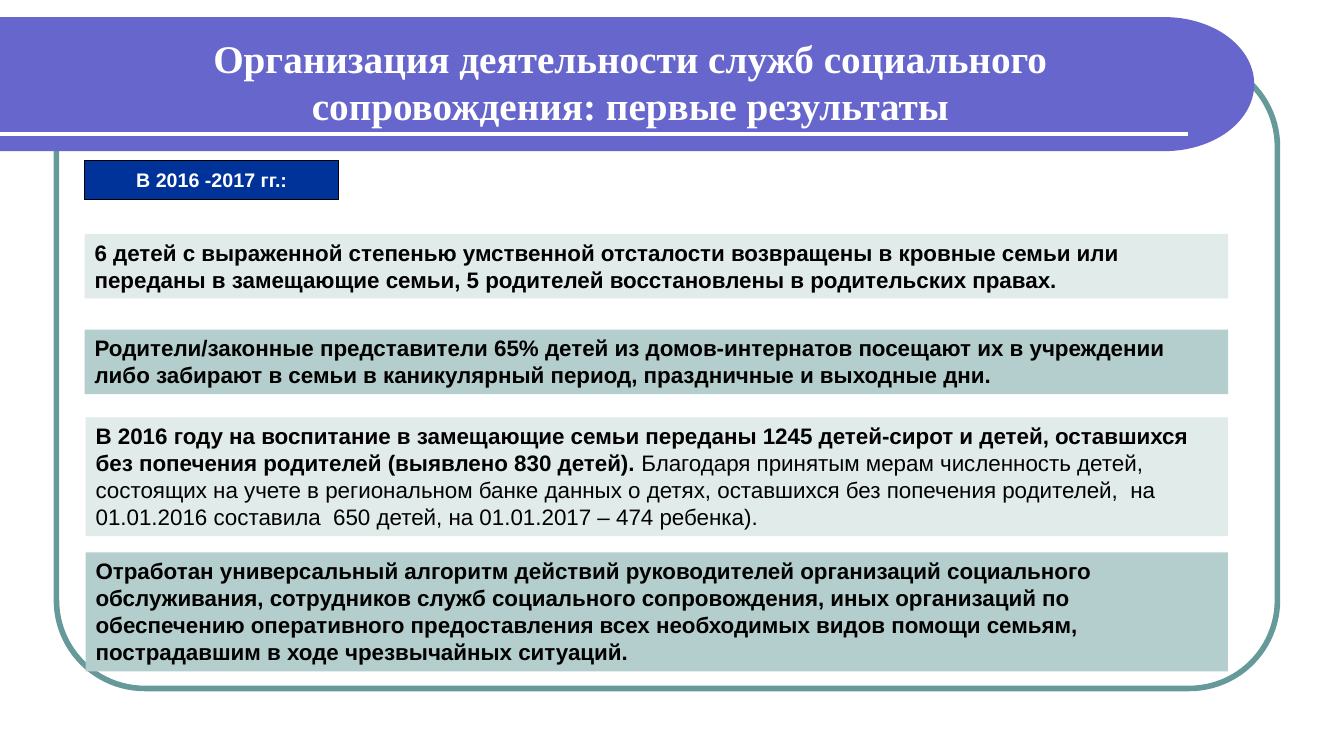
"""Build a slide on the first results of social support services."""
import math
from dataclasses import dataclass

import pptx
import pptx.dml.color
import pptx.enum.shapes
import pptx.enum.text
import pptx.oxml.xmlchemy
import pptx.shapes.autoshape
import pptx.slide
import pptx.text.text
import pptx.util
from pptx.dml.color import RGBColor
from pptx.util import Inches

WHITE = RGBColor(0xFF, 0xFF, 0xFF)
BLACK = RGBColor(0x00, 0x00, 0x00)
TEAL = RGBColor(0x66, 0x99, 0x99)
VIOLET = RGBColor(0x66, 0x66, 0xCC)
NAVY = RGBColor(0x00, 0x33, 0x99)
PALE_TEAL = RGBColor(0xE1, 0xEB, 0xEA)
SOFT_TEAL = RGBColor(0xB3, 0xCE, 0xCD)

TITLE = "Организация деятельности служб социального сопровождения: первые результаты"


@dataclass(frozen=True)
class Result:
    """A result panel with a bold lead and an optional plain remainder."""

    left: float
    top: float
    width: float
    height: float
    fill: RGBColor
    lead: str
    remainder: str = ""


RESULTS = (
    Result(0.84, 2.32, 11.34, 0.64, PALE_TEAL,
           "6 детей с выраженной степенью умственной отсталости возвращены в кровные семьи "
           "или переданы в замещающие семьи, 5 родителей восстановлены в родительских правах."),
    Result(0.84, 3.27, 11.34, 0.64, SOFT_TEAL,
           "Родители/законные представители 65% детей из домов-интернатов посещают их в "
           "учреждении либо забирают в семьи в каникулярный период, праздничные и выходные дни."),
    Result(0.85, 4.14, 11.33, 1.18, PALE_TEAL,
           "В 2016 году на воспитание в замещающие семьи переданы 1245 детей-сирот и детей, "
           "оставшихся без попечения родителей (выявлено 830 детей). ",
           "Благодаря принятым мерам численность детей, состоящих на учете в региональном "
           "банке данных о детях, оставшихся без попечения родителей,  на 01.01.2016 "
           "составила  650 детей, на 01.01.2017 – 474 ребенка)."),
    Result(0.85, 5.48, 11.33, 1.18, SOFT_TEAL,
           "Отработан универсальный алгоритм действий руководителей организаций социального "
           "обслуживания, сотрудников служб социального сопровождения, иных организаций по "
           "обеспечению оперативного предоставления всех необходимых видов помощи семьям, "
           "пострадавшим в ходе чрезвычайных ситуаций."),
)


def format_paragraph(paragraph: pptx.text.text._Paragraph, font_name: str, size: int,
                     color: RGBColor, alignment: pptx.enum.text.PP_ALIGN) -> None:
    """Set the font and alignment of a paragraph."""
    paragraph.alignment = alignment
    paragraph.font.name = font_name
    paragraph.font.size = pptx.util.Pt(size)
    paragraph.font.color.rgb = color
    paragraph.font.bold = True


def add_box(slide: pptx.slide.Slide, left: float, top: float, width: float, height: float,
            fill: RGBColor) -> pptx.shapes.autoshape.Shape:
    """Add a flat rectangle without an outline."""
    shape = slide.shapes.add_shape(pptx.enum.shapes.MSO_SHAPE.RECTANGLE, Inches(left),
                                   Inches(top), Inches(width), Inches(height))
    shape.shadow.inherit = False
    shape.fill.solid()
    shape.fill.fore_color.rgb = fill
    shape.line.fill.background()
    return shape


def add_frame(slide: pptx.slide.Slide) -> None:
    """Add the rounded outline around the content."""
    frame = slide.shapes.add_shape(pptx.enum.shapes.MSO_SHAPE.ROUNDED_RECTANGLE, Inches(0.56),
                                   Inches(0.58), Inches(12.11), Inches(6.25))
    frame.adjustments[0] = 0.14
    frame.shadow.inherit = False
    frame.fill.background()
    frame.line.color.rgb = TEAL
    frame.line.width = pptx.util.Pt(4)


def add_banner(slide: pptx.slide.Slide) -> None:
    """Add the title band with its elliptical end and white rule."""
    top, bottom, straight, right = 0.17, 1.5, 11.55, 12.44
    middle, radius = (top + bottom) / 2, (bottom - top) / 2
    angles = [math.radians(degree) for degree in range(-90, 91, 3)]
    points = [(Inches(straight + (right - straight) * math.cos(angle)),
               Inches(middle + radius * math.sin(angle))) for angle in angles]
    builder = slide.shapes.build_freeform(0, Inches(top))
    builder.add_line_segments(points + [(0, Inches(bottom))], close=True)
    banner = builder.convert_to_shape()
    banner.shadow.inherit = False
    banner.fill.solid()
    banner.fill.fore_color.rgb = VIOLET
    banner.line.fill.background()

    rule = slide.shapes.add_connector(pptx.enum.shapes.MSO_CONNECTOR.STRAIGHT, 0,
                                      Inches(1.33), Inches(11.78), Inches(1.33))
    rule.line.color.rgb = WHITE
    rule.line.width = pptx.util.Pt(3)
    rule.element.spPr.append(pptx.oxml.xmlchemy.OxmlElement("a:effectLst"))


def place_title(slide: pptx.slide.Slide) -> None:
    """Fill the title placeholder and bring it in front of the banner."""
    title = slide.shapes.title
    title.left, title.top = Inches(1.86), Inches(0.36)
    title.width, title.height = Inches(8.78), Inches(0.89)
    title.text_frame.text = TITLE
    title.text_frame.auto_size = pptx.enum.text.MSO_AUTO_SIZE.NONE
    title.text_frame.vertical_anchor = pptx.enum.text.MSO_ANCHOR.MIDDLE
    format_paragraph(title.text_frame.paragraphs[0], "Times New Roman", 28, WHITE,
                     pptx.enum.text.PP_ALIGN.CENTER)
    title.element.getparent().append(title.element)


def add_period(slide: pptx.slide.Slide) -> None:
    """Add the label naming the reporting period."""
    period = add_box(slide, 0.84, 1.59, 2.52, 0.39, NAVY)
    period.line.color.rgb = BLACK
    period.line.width = pptx.util.Pt(0.75)
    period.text_frame.text = "В 2016 -2017 гг.:"
    period.text_frame.word_wrap = False
    period.text_frame.vertical_anchor = pptx.enum.text.MSO_ANCHOR.MIDDLE
    format_paragraph(period.text_frame.paragraphs[0], "Arial", 14, WHITE,
                     pptx.enum.text.PP_ALIGN.CENTER)


def add_result(slide: pptx.slide.Slide, result: Result) -> None:
    """Add one result panel."""
    panel = add_box(slide, result.left, result.top, result.width, result.height, result.fill)
    text_frame = panel.text_frame
    text_frame.word_wrap = True
    text_frame.auto_size = pptx.enum.text.MSO_AUTO_SIZE.SHAPE_TO_FIT_TEXT
    text_frame.vertical_anchor = pptx.enum.text.MSO_ANCHOR.TOP
    paragraph = text_frame.paragraphs[0]
    format_paragraph(paragraph, "Arial", 16, BLACK, pptx.enum.text.PP_ALIGN.LEFT)
    paragraph.add_run().text = result.lead
    if result.remainder:
        remainder = paragraph.add_run()
        remainder.text = result.remainder
        remainder.font.bold = False


def main() -> None:
    """Create and save the presentation."""
    presentation = pptx.Presentation()
    presentation.slide_width = Inches(13.33)
    presentation.slide_height = Inches(7.5)
    slide = presentation.slides.add_slide(presentation.slide_layouts.get_by_name("Title Only"))
    add_frame(slide)
    add_banner(slide)
    place_title(slide)
    add_period(slide)
    for result in RESULTS:
        add_result(slide, result)
    presentation.save("out.pptx")


if __name__ == "__main__":
    main()
